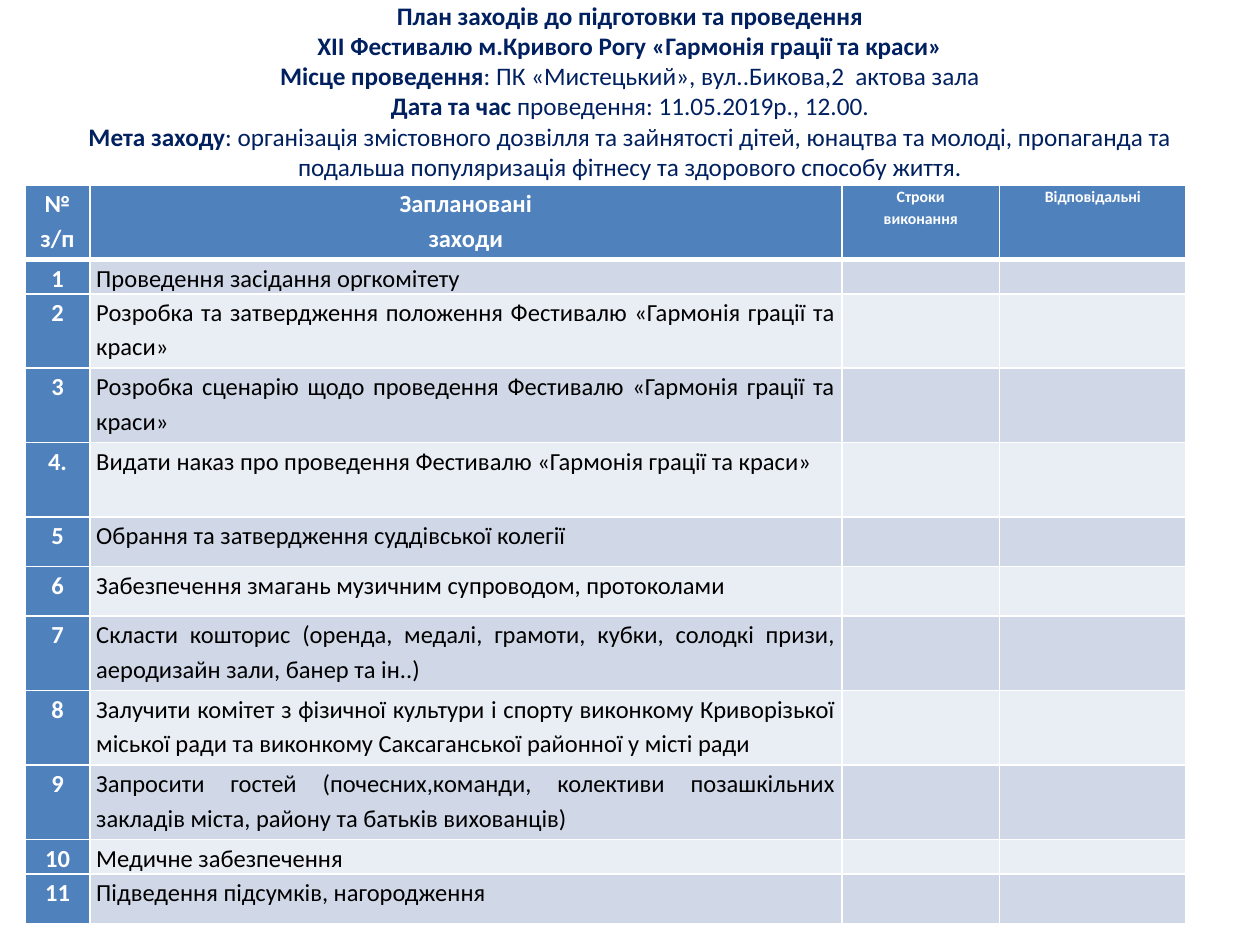
from lxml.etree import SubElement
from pptx import Presentation
from pptx.dml.color import RGBColor
from pptx.enum.text import MSO_ANCHOR as Anchor, MSO_AUTO_SIZE as AutoSize, PP_ALIGN as Align
from pptx.oxml.ns import qn
from pptx.util import Cm, Pt

NAVY = RGBColor(0x00, 0x20, 0x60)
BLUE = RGBColor(0x4F, 0x81, 0xBD)
BAND_DARK = RGBColor(0xD0, 0xD8, 0xE8)
BAND_LIGHT = RGBColor(0xE9, 0xED, 0xF4)
WHITE = RGBColor(0xFF, 0xFF, 0xFF)
BLACK = RGBColor(0x00, 0x00, 0x00)
FONT = "Calibri"

# Each line is a bold part and a regular part.
TITLE_LINES = [
    ("План заходів до підготовки та проведення", ""),
    ("ХІІ Фестивалю м.Кривого Рогу «Гармонія грації та краси»", ""),
    ("Місце проведення", ": ПК «Мистецький», вул..Бикова,2  актова зала"),
    ("Дата та час", " проведення: 11.05.2019р., 12.00."),
    ("Мета заходу", ": організація змістовного дозвілля та зайнятості дітей, юнацтва та молоді, "
     "пропаганда та подальша популяризація фітнесу та здорового способу життя."),
]

LOW, MIDDLE, TALL = 0.64, 1.0, 1.5
COLUMN_WIDTHS = [1.3, 15.16, 3.18, 3.76]
HEADERS = [("№\nз/п", 14), ("Заплановані\nзаходи", 14), ("Строки\nвиконання", 9), ("Відповідальні", 9)]
TASKS = [
    ("1", "Проведення засідання оргкомітету", LOW),
    ("2", "Розробка та затвердження положення Фестивалю «Гармонія грації та краси»", TALL),
    ("3", "Розробка сценарію щодо проведення Фестивалю «Гармонія грації та краси»", TALL),
    ("4.", "Видати наказ про проведення Фестивалю «Гармонія грації та краси»", TALL),
    ("5", "Обрання та затвердження суддівської колегії", MIDDLE),
    ("6", "Забезпечення змагань музичним супроводом, протоколами", MIDDLE),
    ("7", "Скласти кошторис (оренда, медалі, грамоти, кубки, солодкі призи, "
     "аеродизайн зали, банер та ін..)", TALL),
    ("8", "Залучити комітет з фізичної культури і спорту виконкому Криворізької "
     "міської ради та виконкому Саксаганської районної у місті ради", TALL),
    ("9", "Запросити гостей (почесних,команди, колективи позашкільних закладів "
     "міста, району та батьків вихованців)", TALL),
    ("10", "Медичне забезпечення", LOW),
    ("11", "Підведення підсумків, нагородження", MIDDLE),
]


def assign(target, **values):
    for name, value in values.items():
        setattr(target, name, value)


def add_span(para, text, size, color, bold):
    span = para.add_run()
    span.text = text
    assign(span.font, name=FONT, size=Pt(size), bold=bold)
    span.font.color.rgb = color


def place_title(title, left, top, width, height):
    assign(title, left=Cm(left), top=Cm(top), width=Cm(width), height=Cm(height))
    frame = title.text_frame
    assign(frame, word_wrap=True, auto_size=AutoSize.NONE, vertical_anchor=Anchor.BOTTOM,
           margin_top=0, margin_bottom=Cm(0.28))
    for index, (strong, plain) in enumerate(TITLE_LINES):
        para = frame.add_paragraph() if index else frame.paragraphs[0]
        para.alignment = Align.CENTER
        add_span(para, strong, 14.4, NAVY, True)
        if plain:
            add_span(para, plain, 14.4, NAVY, False)


def draw_borders(cell, top=1, bottom=1):
    properties = cell._tc.get_or_add_tcPr()
    for side, points in (("L", 1), ("R", 1), ("T", top), ("B", bottom)):
        line = SubElement(properties, qn(f"a:ln{side}"), w=str(Pt(points)))
        SubElement(SubElement(line, qn("a:solidFill")), qn("a:srgbClr"), val=str(WHITE))


def fill_cell(cell, text, fill, size=14, color=WHITE, bold=True, align=Align.CENTER):
    assign(cell, margin_left=Cm(0.13), margin_right=Cm(0.13), margin_top=0, margin_bottom=0)
    cell.fill.solid()
    cell.fill.fore_color.rgb = fill
    frame = cell.text_frame
    for index, line in enumerate(text.split("\n")):
        para = frame.add_paragraph() if index else frame.paragraphs[0]
        assign(para, alignment=align, line_spacing=1.15)
        if line:
            add_span(para, line, size, color, bold)
        else:  # keeps the empty cell from stretching its row
            SubElement(para._p, qn("a:endParaRPr"), sz="900")


def add_plan_table(page, left, top):
    heights = [TALL] + [height for _, _, height in TASKS]
    table = page.shapes.add_table(len(heights), len(COLUMN_WIDTHS), Cm(left), Cm(top),
                                  Cm(sum(COLUMN_WIDTHS)), Cm(sum(heights))).table
    table.first_col = True
    for column, width in zip(table.columns, COLUMN_WIDTHS):
        column.width = Cm(width)
    for row, height in zip(table.rows, heights):
        row.height = Cm(height)

    for column, (text, size) in enumerate(HEADERS):
        cell = table.cell(0, column)
        draw_borders(cell, bottom=3)
        fill_cell(cell, text, BLUE, size)
    for row, (number, task, _) in enumerate(TASKS, start=1):
        band = BAND_DARK if row % 2 else BAND_LIGHT
        for column, text in enumerate((number, task, "", "")):
            cell = table.cell(row, column)
            draw_borders(cell, top=3 if row == 1 else 1)
            if column == 0:
                fill_cell(cell, text, BLUE)
            else:
                fill_cell(cell, text, band, color=BLACK, bold=False, align=Align.JUSTIFY)


def main():
    deck = Presentation()
    assign(deck, slide_width=Cm(25.4), slide_height=Cm(19.05))
    page = deck.slides.add_slide(deck.slide_layouts[5])
    place_title(page.shapes.title, 1.27, 0.76, 22.86, 3.18)
    add_plan_table(page, 0.51, 3.73)
    deck.save("out.pptx")


if __name__ == "__main__":
    main()
